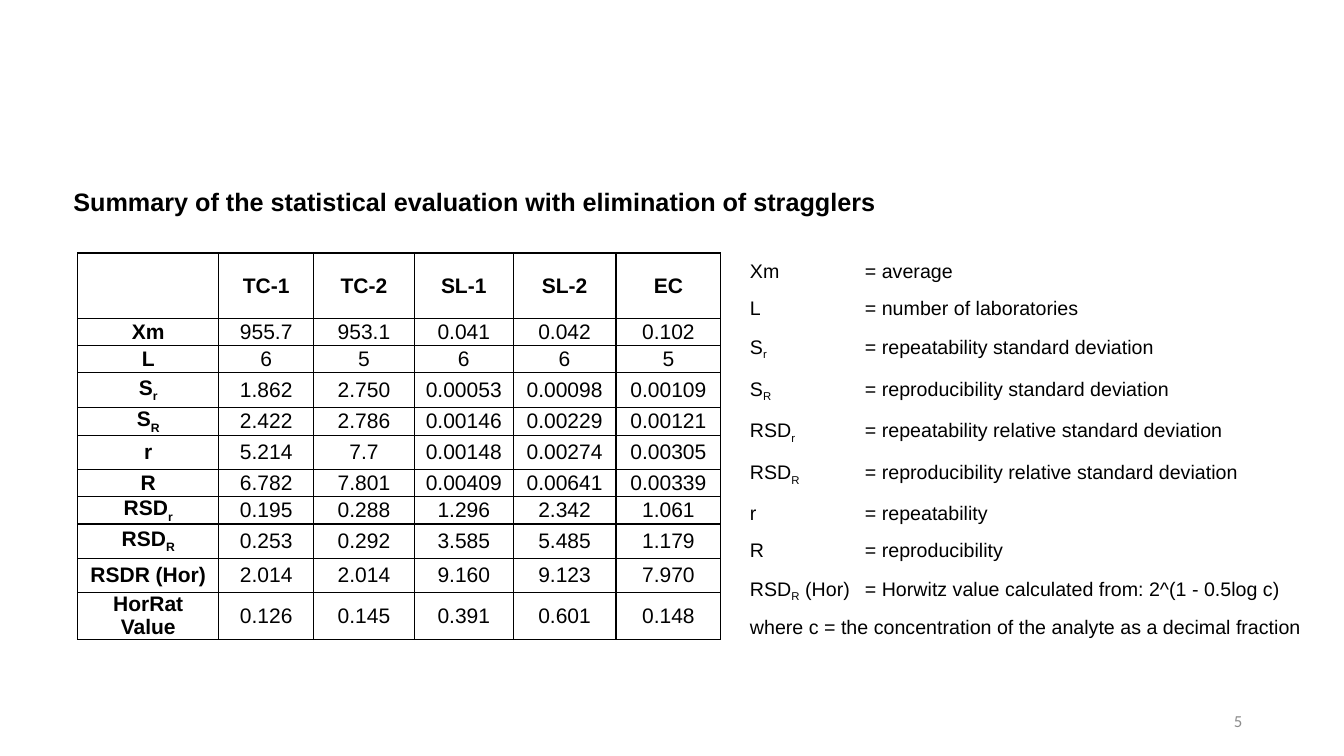
from lxml import etree
from pptx import Presentation
from pptx.dml.color import RGBColor
from pptx.enum.text import MSO_ANCHOR, PP_ALIGN
from pptx.oxml.ns import qn
from pptx.util import Pt

BLACK = RGBColor(0, 0, 0)
GREY = RGBColor(0x8C, 0x8C, 0x8C)
LEFT, CENTER, RIGHT = PP_ALIGN.LEFT, PP_ALIGN.CENTER, PP_ALIGN.RIGHT
TOP, MIDDLE = MSO_ANCHOR.TOP, MSO_ANCHOR.MIDDLE
EMU_PER_PX = 9144

COLUMN_WIDTHS = [140, 94, 100, 98, 102, 104]
ROW_HEIGHTS = [65, 27, 27, 34, 28, 34, 27, 27, 34, 34, 46]
STATISTICS = [
    ["", "TC-1", "TC-2", "SL-1", "SL-2", "EC"],
    ["Xm", "955.7", "953.1", "0.041", "0.042", "0.102"],
    ["L", "6", "5", "6", "6", "5"],
    ["S~r~", "1.862", "2.750", "0.00053", "0.00098", "0.00109"],
    ["S~R~", "2.422", "2.786", "0.00146", "0.00229", "0.00121"],
    ["r", "5.214", "7.7", "0.00148", "0.00274", "0.00305"],
    ["R", "6.782", "7.801", "0.00409", "0.00641", "0.00339"],
    ["RSD~r~", "0.195", "0.288", "1.296", "2.342", "1.061"],
    ["RSD~R~", "0.253", "0.292", "3.585", "5.485", "1.179"],
    ["RSDR (Hor)", "2.014", "2.014", "9.160", "9.123", "7.970"],
    ["HorRat\nValue", "0.126", "0.145", "0.391", "0.601", "0.148"],
]
LEGEND = [
    ("Xm", "average"),
    ("L", "number of laboratories"),
    ("S~r~", "repeatability standard deviation"),
    ("S~R~", "reproducibility standard deviation"),
    ("RSD~r~", "repeatability relative standard deviation"),
    ("RSD~R~", "reproducibility relative standard deviation"),
    ("r", "repeatability"),
    ("R", "reproducibility"),
    ("RSD~R~ (Hor)", "Horwitz value calculated from: 2^(1 - 0.5log c) "
     "where c = the concentration of the analyte as a decimal fraction"),
]


def px(length):
    return length * EMU_PER_PX


def write(frame, text, size=14, font="Arial", color=BLACK, bold=False,
          align=LEFT, line_spacing=None, space_before=None, tab=None):
    """Fill a text frame; text between ~ marks is set as subscript."""
    for number, line in enumerate(text.split("\n")):
        para = frame.add_paragraph() if number else frame.paragraphs[0]
        para.alignment = align
        if line_spacing:
            para.line_spacing = line_spacing
        if space_before:
            para.space_before = Pt(space_before)
        if tab:
            tabs = etree.SubElement(para._p.get_or_add_pPr(), qn("a:tabLst"))
            etree.SubElement(tabs, qn("a:tab"), pos=str(px(tab)), algn="l")
        for part, piece in enumerate(line.split("~")):
            if not piece:
                continue
            span = para.add_run()
            span.text = piece
            span.font.size = Pt(size)
            span.font.name = font
            span.font.bold = bold
            span.font.color.rgb = color
            if part % 2:
                span._r.get_or_add_rPr().set("baseline", "-25000")


class Page:
    def __init__(self, deck):
        self.slide = deck.slides.add_slide(deck.slide_layouts[6])
        self.border_color = BLACK
        self.border_width = Pt(1)

    def text(self, left, top, width, height, text, anchor=TOP, **style):
        box = self.slide.shapes.add_textbox(px(left), px(top), px(width), px(height))
        box.text_frame.word_wrap = True
        box.text_frame.vertical_anchor = anchor
        write(box.text_frame, text, **style)

    def border(self, cell):
        properties = cell._tc.get_or_add_tcPr()
        for side in ("a:lnL", "a:lnR", "a:lnT", "a:lnB"):
            line = etree.SubElement(properties, qn(side), w=str(self.border_width))
            fill = etree.SubElement(line, qn("a:solidFill"))
            etree.SubElement(fill, qn("a:srgbClr"), val=str(self.border_color))

    def table(self, left, top, widths, heights, rows, **style):
        table = self.slide.shapes.add_table(
            len(heights), len(widths), px(left), px(top),
            px(sum(widths)), px(sum(heights))).table
        table.first_row = table.horz_banding = False
        for column, width in zip(table.columns, widths):
            column.width = px(width)
        for row, height in zip(table.rows, heights):
            row.height = px(height)
        for r, values in enumerate(rows):
            for c, value in enumerate(values):
                cell = table.cell(r, c)
                cell.margin_left = cell.margin_right = px(7)
                cell.margin_top = cell.margin_bottom = 0
                cell.vertical_anchor = MIDDLE
                self.border(cell)
                cell.fill.background()
                write(cell.text_frame, value, bold=r == 0 or c == 0, **style)


def main():
    deck = Presentation()
    deck.slide_width, deck.slide_height = px(1333), px(750)
    page = Page(deck)
    page.table(77, 251, COLUMN_WIDTHS, ROW_HEIGHTS, STATISTICS, size=15, align=CENTER)
    page.text(63, 180, 860, 40,
              "Summary of the statistical evaluation with elimination of stragglers",
              size=18, bold=True)
    page.text(734, 240, 577, 375,
              "\n".join(f"{symbol}\t= {meaning}" for symbol, meaning in LEGEND),
              line_spacing=1.5, space_before=1.3, tab=114)
    page.text(942, 695, 300, 40, "5", anchor=MIDDLE, size=12, font="Calibri",
              color=GREY, align=RIGHT)
    deck.save("out.pptx")


if __name__ == "__main__":
    main()
